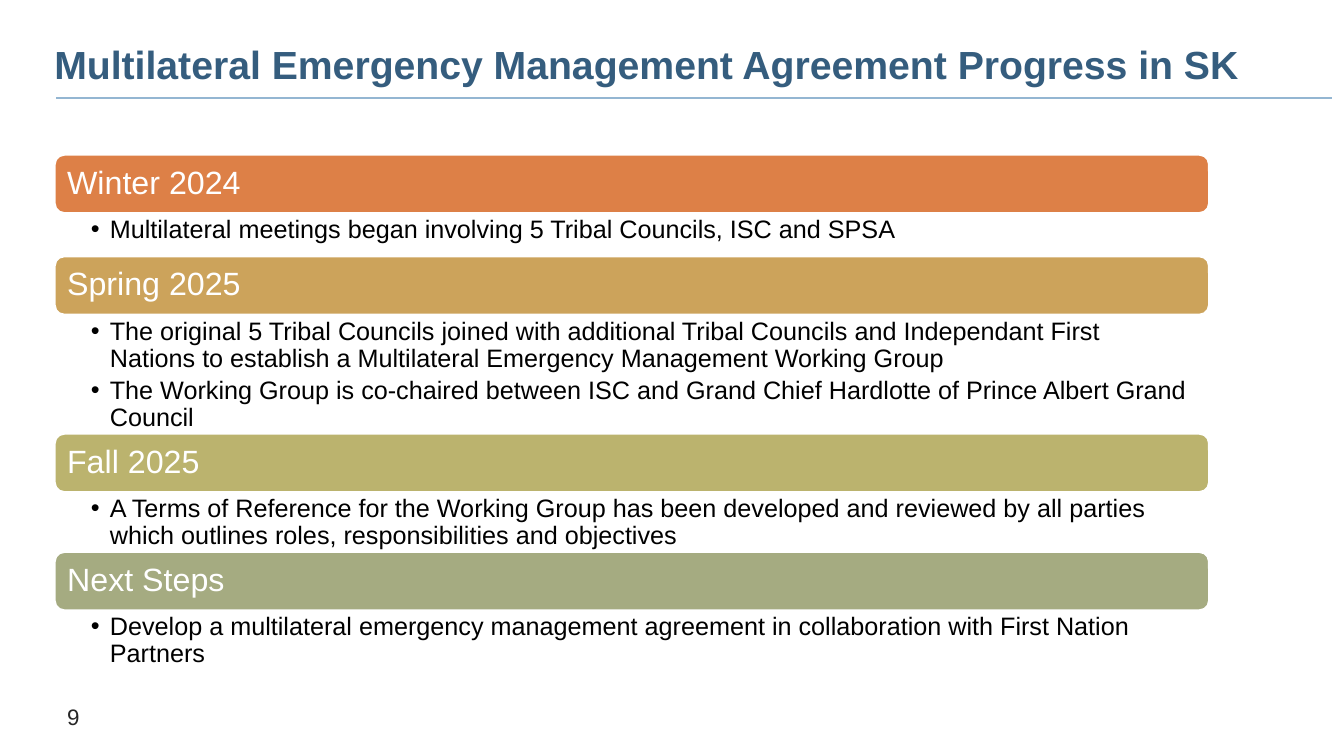
from pptx import Presentation
from pptx.dml.color import RGBColor
from pptx.enum.shapes import MSO_CONNECTOR, MSO_SHAPE
from pptx.enum.text import MSO_ANCHOR, MSO_AUTO_SIZE, PP_ALIGN
from pptx.oxml.ns import qn
from pptx.util import Cm, Pt
from lxml.etree import SubElement

HUES = {
    "title": "355D7E", "rule": "94B6D2", "text": "000000",
    "page": "262626", "white": "FFFFFF", "winter": "DD8047",
    "spring": "CCA35B", "fall": "BBB36E", "next": "A5AB81",
}
LEFT, WIDE, BAR = 1.37, 29.11, 1.49
STAGES = [
    ("winter", "Winter 2024", 1.07, [
        "Multilateral meetings began involving 5 Tribal Councils, ISC and SPSA"]),
    ("spring", "Spring 2025", 2.98, [
        "The original 5 Tribal Councils joined with additional Tribal Councils and Independant First Nations to establish a Multilateral Emergency Management Working Group",
        "The Working Group is co-chaired between ISC and Grand Chief Hardlotte of Prince Albert Grand Council"]),
    ("fall", "Fall 2025", 1.49, [
        "A Terms of Reference for the Working Group has been developed and reviewed by all parties which outlines roles, responsibilities and objectives"]),
    ("next", "Next Steps", 1.49, [
        "Develop a multilateral emergency management agreement in collaboration with First Nation Partners"]),
]


class Deck:
    def __init__(self, face):
        self.face = face
        self.show = Presentation()
        self.show.slide_width, self.show.slide_height = Cm(33.87), Cm(19.05)
        self.slide = self.show.slides.add_slide(self.show.slide_layouts[5])

    def color(self, name):
        return RGBColor.from_string(HUES[name])

    def frame(self, shape, pads, anchor):
        frame = shape.text_frame
        frame.word_wrap = True
        frame.auto_size = MSO_AUTO_SIZE.NONE
        frame.vertical_anchor = anchor
        (frame.margin_left, frame.margin_top,
         frame.margin_right, frame.margin_bottom) = [Cm(pad) for pad in pads]
        return frame

    def words(self, para, text, size, hue, bold=False, align=PP_ALIGN.LEFT):
        para.alignment = align
        run = para.add_run()
        run.text = text
        run.font.name, run.font.size, run.font.bold = self.face, Pt(size), bold
        run.font.color.rgb = self.color(hue)

    def title(self, text, *box):
        shape = self.slide.shapes.title
        shape.left, shape.top, shape.width, shape.height = map(Cm, box)
        para = self.frame(shape, [0] * 4, MSO_ANCHOR.TOP).paragraphs[0]
        para.line_spacing = Pt(32)
        self.words(para, text, 28, "title", True)

    def rule(self, left, top, right):
        line = self.slide.shapes.add_connector(
            MSO_CONNECTOR.STRAIGHT, Cm(left), Cm(top), Cm(right), Cm(top))
        line.line.color.rgb = self.color("rule")
        line.line.width = Pt(1.5)
        SubElement(line._element.spPr, qn("a:effectLst"))

    def bar(self, text, hue, *box):
        shape = self.slide.shapes.add_shape(
            MSO_SHAPE.ROUNDED_RECTANGLE, *map(Cm, box))
        shape.shadow.inherit = False
        shape.fill.solid()
        shape.fill.fore_color.rgb = self.color(hue)
        shape.line.color.rgb = self.color("white")
        shape.line.width = Pt(2)
        para = self.frame(shape, [0.25] * 4, MSO_ANCHOR.MIDDLE).paragraphs[0]
        para.line_spacing = 0.9
        self.words(para, text, 23, "white")

    def points(self, items, *box):
        shape = self.slide.shapes.add_textbox(*map(Cm, box))
        frame = self.frame(shape, [0.92, 0.08, 0.46, 0.08], MSO_ANCHOR.TOP)
        for spot, item in enumerate(items):
            para = frame.add_paragraph() if spot else frame.paragraphs[0]
            para.line_spacing, para.space_after = 0.9, Pt(3.5)
            props = para._p.get_or_add_pPr()
            props.set("marL", str(Cm(0.48)))
            props.set("indent", str(Cm(-0.48)))
            SubElement(props, qn("a:buFont"), typeface=self.face)
            SubElement(props, qn("a:buChar"), char="•")
            self.words(para, item, 18, "text")

    def page(self, text, *box):
        shape = self.slide.shapes.add_textbox(*map(Cm, box))
        frame = self.frame(shape, [0.25, 0.13, 0.25, 0.13], MSO_ANCHOR.TOP)
        self.words(frame.paragraphs[0], text, 16, "page", align=PP_ALIGN.CENTER)


def main():
    deck = Deck("Arial")
    deck.title("Multilateral Emergency Management Agreement Progress in SK",
               LEFT, 1.07, 30.91, 0.84)
    deck.rule(1.42, 2.47, 33.58)
    top = 3.89
    for hue, head, high, items in STAGES:
        deck.bar(head, hue, LEFT, top, WIDE, BAR)
        deck.points(items, LEFT, top + BAR, WIDE, high)
        top += BAR + high
    deck.page("9", 0.25, 17.6, 3.2, 0.94)
    deck.show.save("out.pptx")


if __name__ == "__main__":
    main()
